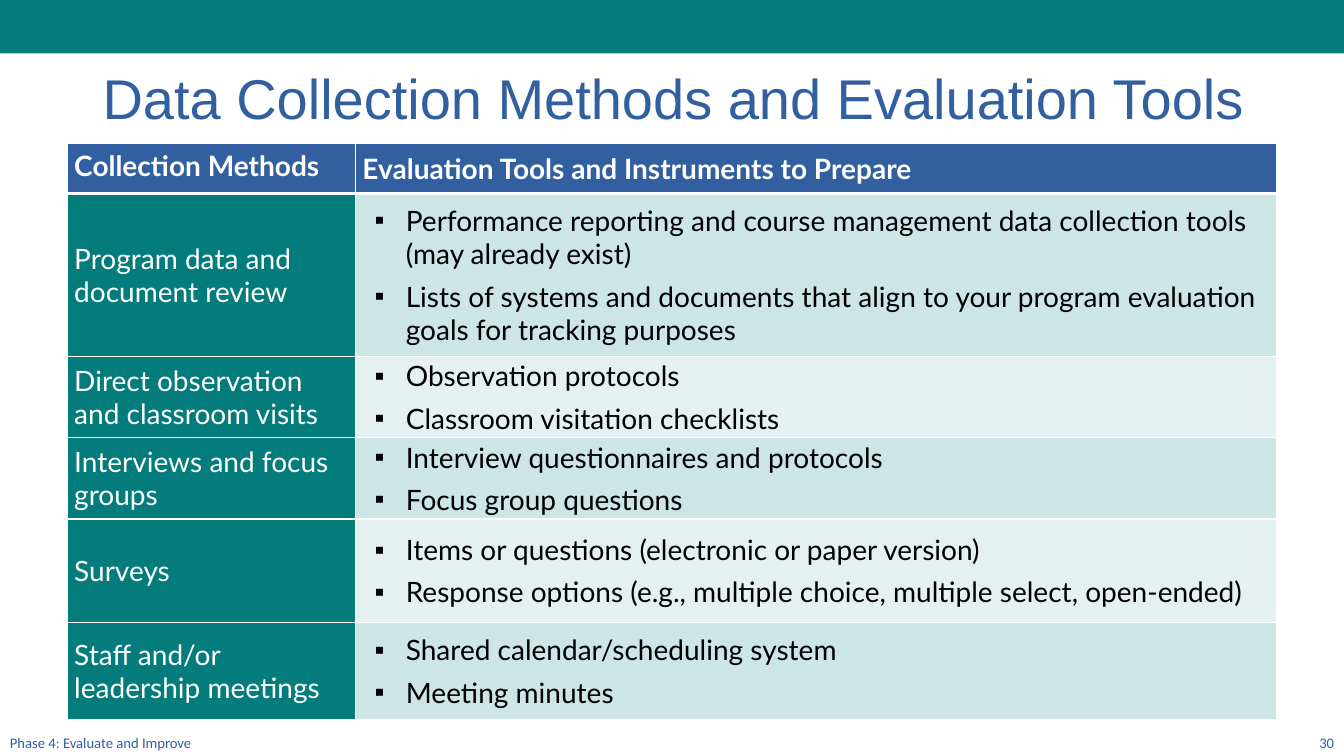
from dataclasses import dataclass

from lxml import etree
from pptx import Presentation
from pptx import util as u
from pptx.dml.color import RGBColor
from pptx.enum import shapes, text
from pptx.oxml import ns

COLOURS = {"teal": "047C7C", "blue": "315F9F", "mint": "CDE5E5",
           "white": "FFFFFF", "black": "000000"}
WIDTH, HEIGHT = u.Inches(13.33), u.Inches(7.5)
COLUMNS = (21.45, 68.55)  # percent of the slide's width
HEADER_HEIGHT = 6.67  # percent of the slide's height
MIDDLE, BOTTOM = text.MSO_ANCHOR.MIDDLE, text.MSO_ANCHOR.BOTTOM
LEFT, RIGHT = text.PP_ALIGN.LEFT, text.PP_ALIGN.RIGHT


@dataclass(frozen=True)
class Area:
    """A rectangle in percent of the slide's size."""
    left: float
    top: float
    width: float
    height: float

    def lengths(self) -> tuple:
        return (across(self.left), down(self.top),
                across(self.width), down(self.height))


@dataclass(frozen=True)
class Style:
    font: str
    size: float
    colour: str
    bold: bool = False


@dataclass(frozen=True)
class Label:
    words: str
    area: Area
    style: Style
    anchor: text.MSO_ANCHOR
    align: text.PP_ALIGN = LEFT
    spacing: float = 1.0


@dataclass(frozen=True)
class Method:
    name: str
    tools: tuple
    height: float


FOOTER = Style("Calibri", 10.5, "blue")
HEADER = Style("Lato", 20, "white", True)
METHOD = Style("Lato", 20, "white")
TOOL = Style("Lato", 20, "black")

LABELS = (
    Label("Data Collection Methods and Evaluation Tools",
          Area(6.9, 8.8, 88.35, 9.33), Style("Arial", 40, "blue"), MIDDLE, spacing=0.9),
    Label("30", Area(77.5, 95.87, 22.5, 4.13), FOOTER, BOTTOM, RIGHT),
    Label("Phase 4: Evaluate and Improve", Area(0, 95.87, 33.75, 4.13), FOOTER, BOTTOM),
)
HEADINGS = ("Collection Methods", "Evaluation Tools and Instruments to Prepare")
METHODS = (
    Method("Program data and document review",
           ("Performance reporting and course management data collection tools "
            "(may already exist)",
            "Lists of systems and documents that align to your program evaluation "
            "goals for tracking purposes"), 21.6),
    Method("Direct observation and classroom visits",
           ("Observation protocols", "Classroom visitation checklists"), 10.67),
    Method("Interviews and focus groups",
           ("Interview questionnaires and protocols", "Focus group questions"), 10.8),
    Method("Surveys",
           ("Items or questions (electronic or paper version)",
            "Response options (e.g., multiple choice, multiple select, open-ended)"), 13.73),
    Method("Staff and/or leadership meetings",
           ("Shared calendar/scheduling system", "Meeting minutes"), 12.8),
)


def across(percent: float) -> int:
    return round(WIDTH * percent / 100)


def down(percent: float) -> int:
    return round(HEIGHT * percent / 100)


def colour(name: str) -> RGBColor:
    return RGBColor.from_string(COLOURS[name])


def format_runs(para, style: Style) -> None:
    for span in para.runs:
        span.font.name = style.font
        span.font.size = u.Pt(style.size)
        span.font.bold = style.bold
        span.font.color.rgb = colour(style.colour)


def add_label(page, label: Label) -> None:
    box = page.shapes.add_textbox(*label.area.lengths())
    frame = box.text_frame
    frame.word_wrap = True
    frame.vertical_anchor = label.anchor
    frame.text = label.words
    para = frame.paragraphs[0]
    para.alignment = label.align
    para.line_spacing = label.spacing
    format_runs(para, label.style)


def add_bullet(para) -> None:
    para.space_after = u.Pt(6)
    props = para._p.get_or_add_pPr()
    props.set("marL", str(u.Inches(0.43)))
    props.set("indent", str(u.Inches(-0.31)))
    etree.SubElement(props, ns.qn("a:buFont"), typeface="Arial")
    etree.SubElement(props, ns.qn("a:buChar"), char="▪")


def set_borders(cell, top: float, bottom: float) -> None:
    props = cell._tc.get_or_add_tcPr()
    sides = (("L", 1), ("R", 1), ("T", top), ("B", bottom))
    for place, (side, points) in enumerate(sides):
        line = etree.Element(ns.qn(f"a:ln{side}"), w=str(u.Pt(points)))
        fill = etree.SubElement(line, ns.qn("a:solidFill"))
        etree.SubElement(fill, ns.qn("a:srgbClr"), val=COLOURS["white"])
        props.insert(place, line)


def fill_cell(cell, lines: tuple, style: Style, fill: str,
              opacity: int = 100, bullets: bool = False) -> None:
    cell.vertical_anchor = MIDDLE
    cell.margin_left = cell.margin_right = u.Inches(0.07)
    cell.margin_top = cell.margin_bottom = 0
    cell.fill.solid()
    cell.fill.fore_color.rgb = colour(fill)
    if opacity < 100:
        tint = cell._tc.tcPr.find(".//" + ns.qn("a:srgbClr"))
        etree.SubElement(tint, ns.qn("a:alpha"), val=str(opacity * 1000))
    cell.text_frame.text = "\n".join(lines)
    for para in cell.text_frame.paragraphs:
        format_runs(para, style)
        if bullets:
            add_bullet(para)


def add_methods_table(page) -> None:
    heights = (HEADER_HEIGHT, *(method.height for method in METHODS))
    area = Area(5, 18.93, sum(COLUMNS), sum(heights))
    table = page.shapes.add_table(len(heights), len(COLUMNS), *area.lengths()).table
    table.horz_banding = False
    for column, width in zip(table.columns, COLUMNS):
        column.width = across(width)
    for row, height in zip(table.rows, heights):
        row.height = down(height)

    # Header row
    for column, heading in enumerate(HEADINGS):
        cell = table.cell(0, column)
        fill_cell(cell, (heading,), HEADER, "blue")
        set_borders(cell, 1, 3)
    table.cell(0, 0).text_frame.paragraphs[0].line_spacing = u.Pt(20)

    # One row for each method, in alternating tints
    for row, method in enumerate(METHODS, 1):
        name, tools = table.cell(row, 0), table.cell(row, 1)
        tint, opacity = ("mint", 100) if row % 2 else ("teal", 10)
        fill_cell(name, (method.name,), METHOD, "teal")
        fill_cell(tools, method.tools, TOOL, tint, opacity, bullets=True)
        for cell in (name, tools):
            set_borders(cell, 3 if row == 1 else 1, 1)


def main() -> None:
    deck = Presentation()
    deck.slide_width, deck.slide_height = WIDTH, HEIGHT
    page = deck.slides.add_slide(deck.slide_layouts[6])

    # Top band
    band = page.shapes.add_shape(shapes.MSO_SHAPE.RECTANGLE, *Area(0, 0, 100, 7.07).lengths())
    band.shadow.inherit = False
    band.fill.solid()
    band.fill.fore_color.rgb = colour("teal")
    band.line.fill.background()

    # Title, footer and table
    for label in LABELS:
        add_label(page, label)
    add_methods_table(page)
    deck.save("out.pptx")


if __name__ == "__main__":
    main()
